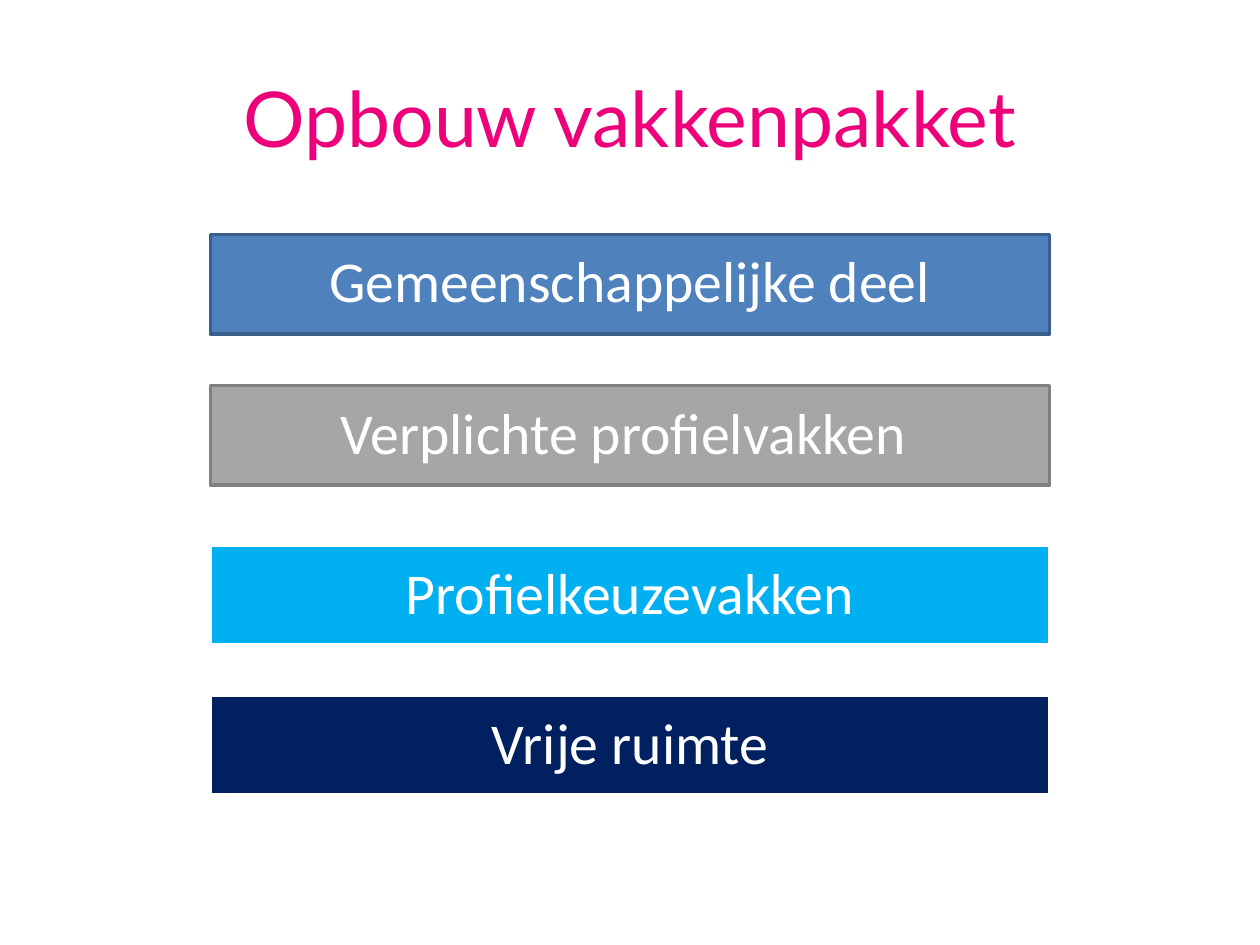
"""Build the slide that shows the four parts of a subject package."""
from pptx import Presentation
from pptx.dml.color import RGBColor
from pptx.enum.shapes import MSO_SHAPE as Shape
from pptx.enum.text import MSO_ANCHOR as Anchor, PP_ALIGN as Align
from pptx.util import Pt

WHITE = RGBColor(0xFF, 0xFF, 0xFF)
PINK = RGBColor(0xED, 0x00, 0x7A)
BLUE = RGBColor(0x4F, 0x81, 0xBD)
DARK_BLUE = RGBColor(0x3A, 0x5F, 0x8C)
GREY = RGBColor(0xA6, 0xA6, 0xA6)
DARK_GREY = RGBColor(0x80, 0x80, 0x80)
SKY = RGBColor(0x00, 0xB0, 0xF0)
NAVY = RGBColor(0x00, 0x20, 0x60)

BAR_LEFT, BAR_WIDTH, BAR_HEIGHT = 120.24, 479.52, 56.88
BAR_INSET = 10.08

PARTS = [
    ("Gemeenschappelijke deel", 133.92, BLUE, DARK_BLUE),
    ("Verplichte profielvakken ", 220.32, GREY, DARK_GREY),
    ("Profielkeuzevakken", 311.76, SKY, WHITE),
    ("Vrije ruimte", 397.44, NAVY, WHITE),
]


def write_centred(frame, wording, font_name, size, colour):
    frame.word_wrap = True
    frame.vertical_anchor = Anchor.MIDDLE
    frame.text = wording
    line = frame.paragraphs[0]
    line.alignment = Align.CENTER
    font = line.runs[0].font
    font.name = font_name
    font.size = Pt(size)
    font.color.rgb = colour


def add_title(slide, wording):
    title = slide.shapes.add_textbox(Pt(36), Pt(21.6), Pt(648), Pt(90))
    write_centred(title.text_frame, wording, "Lato", 44, PINK)


def add_bar(slide, wording, top, fill, outline):
    bar = slide.shapes.add_shape(
        Shape.RECTANGLE, Pt(BAR_LEFT), Pt(top), Pt(BAR_WIDTH), Pt(BAR_HEIGHT))
    bar.shadow.inherit = False
    bar.fill.solid()
    bar.fill.fore_color.rgb = fill
    bar.line.color.rgb = outline
    bar.line.width = Pt(2)
    frame = bar.text_frame
    frame.margin_left = frame.margin_right = Pt(BAR_INSET)
    frame.margin_top = frame.margin_bottom = Pt(BAR_INSET)
    write_centred(frame, wording, "Calibri", 33, WHITE)
    frame.paragraphs[0].line_spacing = 0.9


def main():
    deck = Presentation()
    deck.slide_width, deck.slide_height = Pt(720), Pt(540)
    slide = deck.slides.add_slide(deck.slide_layouts[6])
    add_title(slide, "Opbouw vakkenpakket")
    for part in PARTS:
        add_bar(slide, *part)
    deck.save("out.pptx")


if __name__ == "__main__":
    main()
